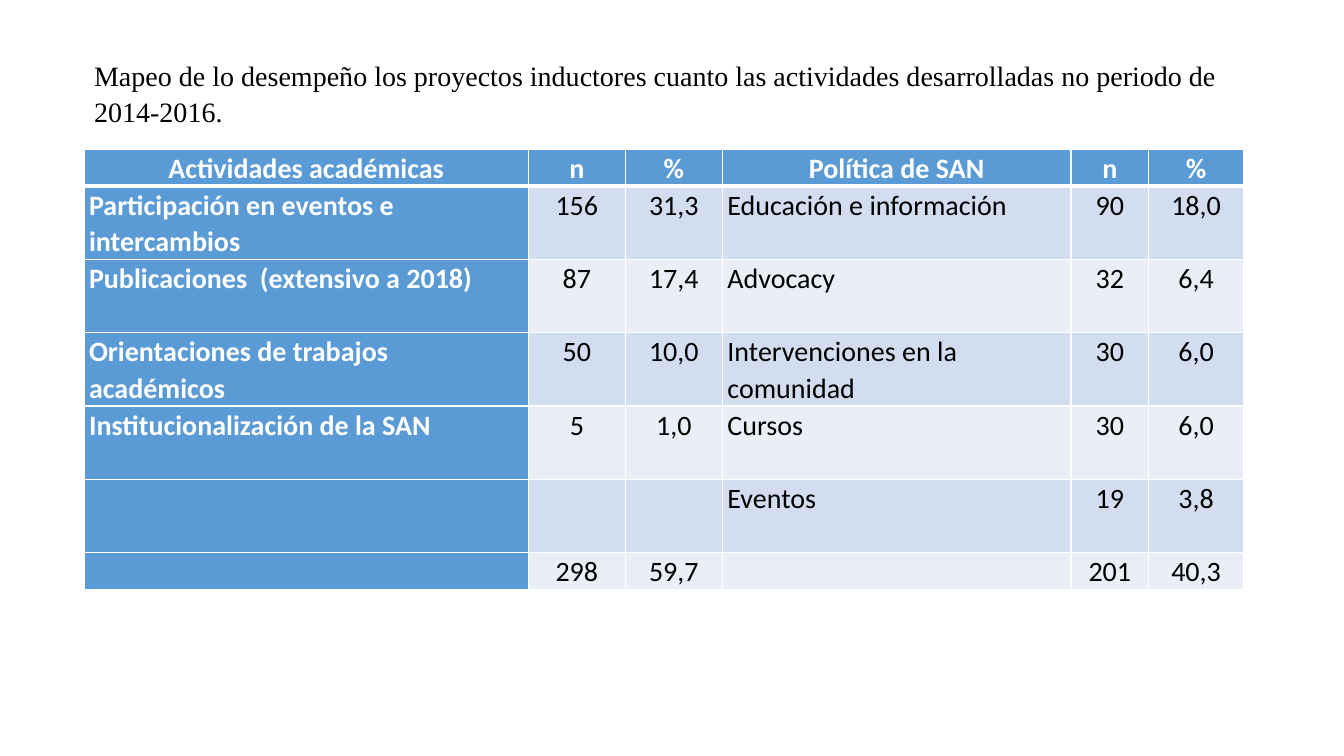
from pptx import Presentation, util as u
from pptx.dml.color import RGBColor
from pptx.enum import text
from pptx.oxml import parse_xml
from pptx.oxml.ns import nsdecls

ROWS = [
    ("Actividades académicas", "n", "%", "Política de SAN", "n", "%"),
    ("Participación en eventos e intercambios", "156", "31,3",
     "Educación e información", "90", "18,0"),
    ("Publicaciones  (extensivo a 2018)", "87", "17,4", "Advocacy", "32", "6,4"),
    ("Orientaciones de trabajos académicos", "50", "10,0",
     "Intervenciones en la comunidad", "30", "6,0"),
    ("Institucionalización de la SAN", "5", "1,0", "Cursos", "30", "6,0"),
    ("", "", "", "Eventos", "19", "3,8"),
    ("", "298", "59,7", "", "201", "40,3"),
]
COL_WIDTHS = [317.4, 69.3, 69.3, 249, 55.6, 67.6]
LINE_HEIGHT = 26.2
ROW_HEIGHTS = [LINE_HEIGHT] + [2 * LINE_HEIGHT] * 5 + [LINE_HEIGHT]


def color(value):
    return RGBColor.from_string(value)


class Deck:
    size = 20
    spacing = 1.07
    title_font, body_font = "Times New Roman", "Calibri"
    ink, paper, accent = "000000", "FFFFFF", "5B9BD5"
    bands = ("EAEFF7", "D2DEEF")

    def __init__(self, prs):
        self.s = prs.slides.add_slide(prs.slide_layouts[5])

    def set_text(self, tf, content, font, ink, align, bold=False):
        tf.text = content
        p = tf.paragraphs[0]
        p.alignment = align
        p.line_spacing = self.spacing
        for r in p.runs:
            r.font.name = font
            r.font.size = u.Pt(self.size)
            r.font.bold = bold
            r.font.color.rgb = color(ink)

    def title(self, content, left, top, width, height):
        sp = self.s.shapes.title
        sp.left, sp.top, sp.width, sp.height = map(u.Pt, (left, top, width, height))
        tf = sp.text_frame
        tf.word_wrap = True
        tf.auto_size = text.MSO_AUTO_SIZE.NONE
        tf.vertical_anchor = text.MSO_ANCHOR.TOP
        self.set_text(tf, content, self.title_font, self.ink, text.PP_ALIGN.LEFT)

    def border(self, cell, side, width):
        cell._tc.get_or_add_tcPr().append(parse_xml(
            f'<a:ln{side} {nsdecls("a")} w="{u.Pt(width)}"><a:solidFill>'
            f'<a:srgbClr val="{self.paper}"/></a:solidFill></a:ln{side}>'))

    def cell(self, cell, content, row, col):
        header = row == 0
        strong = header or col == 0
        cell.margin_left = cell.margin_right = u.Pt(3.6)
        cell.margin_top = cell.margin_bottom = 0
        cell.vertical_anchor = text.MSO_ANCHOR.TOP
        for side in "LRTB":
            under_header = (row, side) in ((0, "B"), (1, "T"))
            self.border(cell, side, 3 if under_header else 1)
        cell.fill.solid()
        cell.fill.fore_color.rgb = color(self.accent if strong else self.bands[row % 2])
        centered = header or col not in (0, 3)
        align = text.PP_ALIGN.CENTER if centered else text.PP_ALIGN.LEFT
        self.set_text(cell.text_frame, content, self.body_font,
                      self.paper if strong else self.ink, align, strong)

    def table(self, rows, left, top, widths, heights):
        box = map(u.Pt, (left, top, sum(widths), sum(heights)))
        table = self.s.shapes.add_table(len(rows), len(widths), *box).table
        table.first_col = True
        for column, width in zip(table.columns, widths):
            column.width = u.Pt(width)
        for i, (row, height) in enumerate(zip(rows, heights)):
            table.rows[i].height = u.Pt(height)
            for j, content in enumerate(row):
                self.cell(table.cell(i, j), content, i, j)


def main():
    prs = Presentation()
    prs.slide_width, prs.slide_height = u.Pt(960), u.Pt(540)
    deck = Deck(prs)
    deck.title("Mapeo de lo desempeño los proyectos inductores cuanto las actividades "
               "desarrolladas no periodo de 2014-2016.", 60, 36.7, 821.5, 57.6)
    deck.table(ROWS, 60, 106.6, COL_WIDTHS, ROW_HEIGHTS)
    prs.save("out.pptx")


if __name__ == "__main__":
    main()
